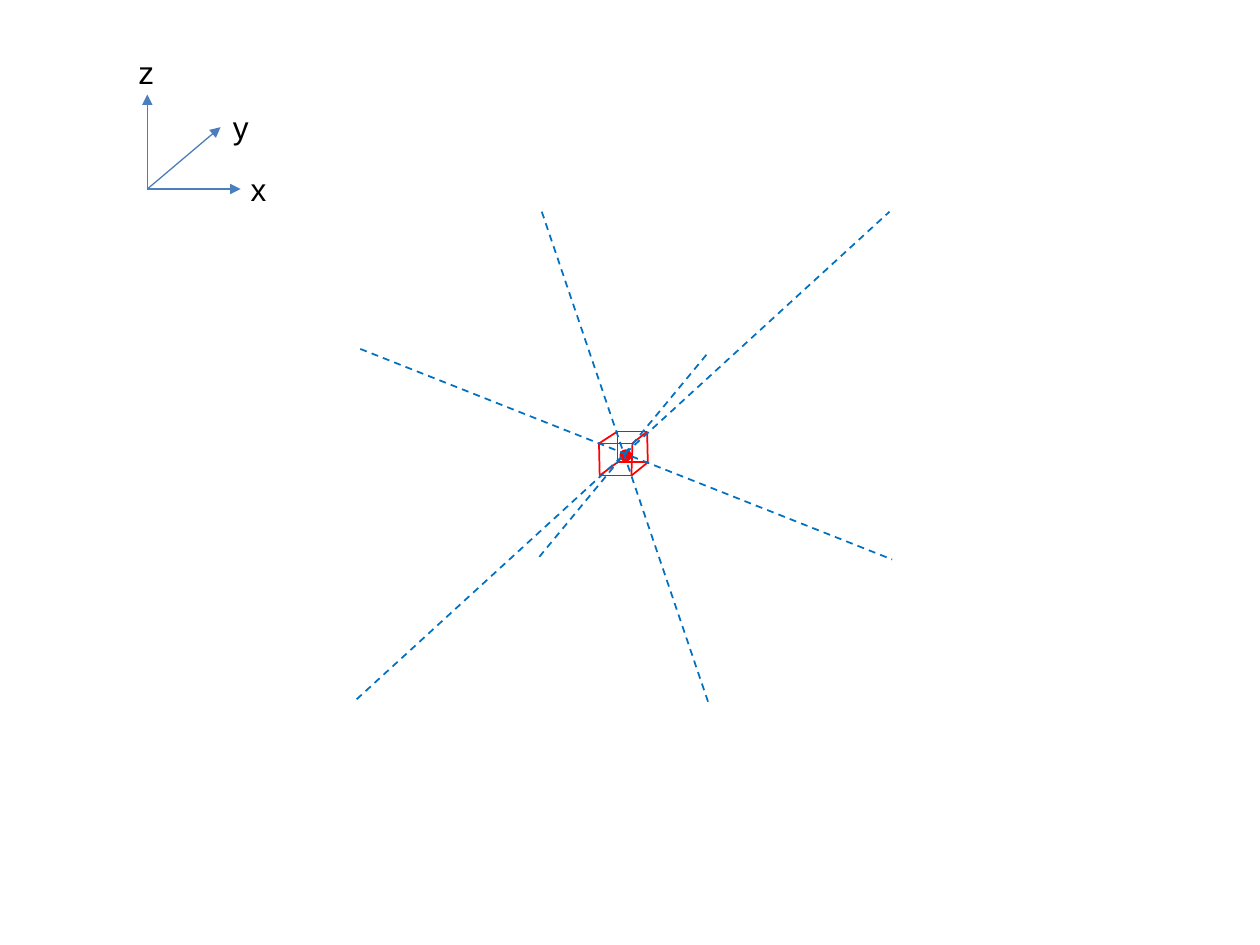
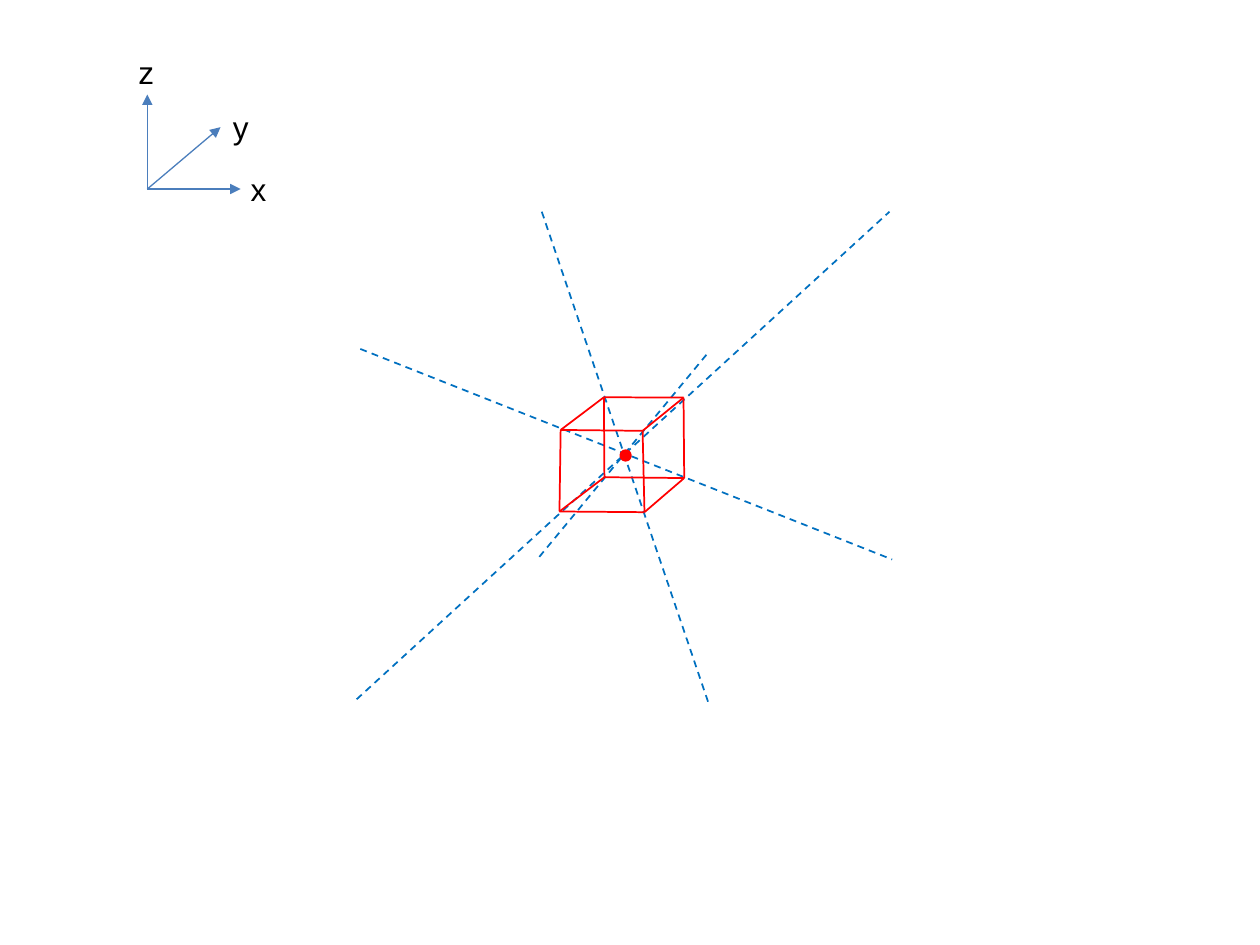
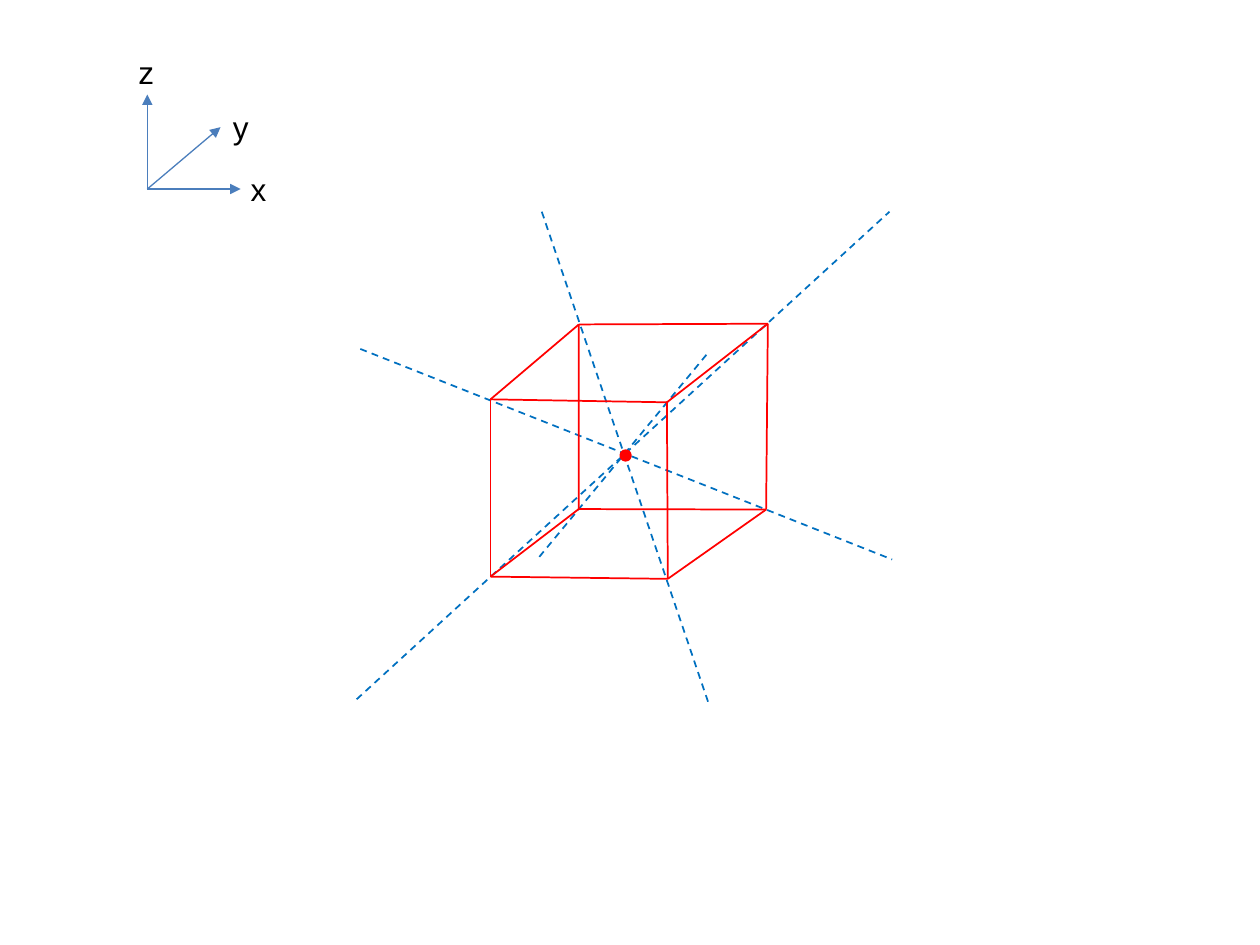
from lxml.etree import SubElement
from pptx import Presentation
from pptx.dml.color import RGBColor
from pptx.enum.dml import MSO_LINE
from pptx.enum.shapes import MSO_CONNECTOR, MSO_SHAPE
from pptx.enum.text import MSO_AUTO_SIZE
from pptx.oxml.ns import qn
from pptx.util import Pt

# Shared style
RED, RAY_BLUE, AXIS_BLUE, BLACK = "FF0000", "0070C0", "4B7EBC", "000000"
FONT = "Arial"

# Shared positions, in points
AXES_ORIGIN = (84.2, 108)
CENTER = (357.5, 260.3)
DOT_SIZE = 5
LABEL_SIZE = (18, 28.8)

# Axis name, arrow tip and label corner, relative to the origin
AXES = [
    ("x", (53.3, 0), (51.9, -14.4)),
    ("y", (41.8, -35.3), (41.8, -49.7)),
    ("z", (0, -54), (-12.2, -81.4)),
]

# Ends of the diagonals, relative to the center
RAYS = [
    ((-47.9, -139.3), (47.1, 140.7)),
    ((-153.7, 139.3), (150.8, -139.3)),
    ((-151.6, -60.9), (152.3, 59.4)),
    ((-49.3, 57.9), (47.1, -58.7)),
]

# Cube corners relative to the center: each face clockwise from its top left
SMALL_CUBE = {
    "front": [(-15.2, -6.9), (3.9, -6.9), (3.3, 11.5), (-14.8, 11.5)],
    "back": [(-4.7, -13.7), (12.3, -13.7), (12.7, 3.9), (-4.7, 3.9)],
}
MEDIUM_CUBE = {
    "front": [(-37.1, -14.6), (9.7, -14.1), (10.8, 32.4), (-37.8, 32)],
    "back": [(-12.4, -33.3), (33.1, -33.1), (33.5, 12.9), (-12.1, 12.4)],
}
LARGE_CUBE = {
    "front": [(-77.2, -32.1), (23.6, -30.4), (24.1, 70.5), (-77.2, 69.2)],
    "back": [(-26.7, -74.9), (81.3, -75.3), (80.3, 30.9), (-26.8, 30.6)],
}


def color(hex_string):
    return RGBColor.from_string(hex_string)


def shift(base, offset):
    return base[0] + offset[0], base[1] + offset[1]


def add_line(slide, start, end, line_color, width=1, dashed=False, arrow=False):
    ends = [Pt(value) for value in (*start, *end)]
    connector = slide.shapes.add_connector(MSO_CONNECTOR.STRAIGHT, *ends)
    connector.line.color.rgb = color(line_color)
    connector.line.width = Pt(width)
    if dashed:
        connector.line.dash_style = MSO_LINE.DASH
    properties = connector._element.spPr
    if arrow:
        SubElement(properties.find(qn("a:ln")), qn("a:tailEnd"), type="triangle")
    SubElement(properties, qn("a:effectLst"))


def add_text(slide, text, position, size, font_size=18, font_color=BLACK):
    box = slide.shapes.add_textbox(*[Pt(value) for value in (*position, *size)])
    frame = box.text_frame
    frame.word_wrap = True
    frame.auto_size = MSO_AUTO_SIZE.SHAPE_TO_FIT_TEXT
    run = frame.paragraphs[0].add_run()
    run.text = text
    run.font.name = FONT
    run.font.size = Pt(font_size)
    run.font.color.rgb = color(font_color)


def add_axes(slide, origin):
    for _, tip, _ in AXES:
        add_line(slide, origin, shift(origin, tip), AXIS_BLUE, width=0.75, arrow=True)
    for name, _, corner in AXES:
        add_text(slide, name, shift(origin, corner), LABEL_SIZE)


def add_rays(slide, center):
    for start, end in RAYS:
        add_line(slide, shift(center, start), shift(center, end), RAY_BLUE, dashed=True)


def add_dot(slide, center):
    left, top = shift(center, (-DOT_SIZE / 2, -DOT_SIZE / 2))
    dot = slide.shapes.add_shape(
        MSO_SHAPE.OVAL, Pt(left), Pt(top), Pt(DOT_SIZE), Pt(DOT_SIZE))
    dot.shadow.inherit = False
    dot.fill.solid()
    dot.fill.fore_color.rgb = color(RED)
    dot.line.color.rgb = color(RED)
    dot.line.width = Pt(2)


def add_cube(slide, center, cube):
    front = [shift(center, corner) for corner in cube["front"]]
    back = [shift(center, corner) for corner in cube["back"]]
    # Four edges around each face, and four from front to back
    for index in range(4):
        add_line(slide, front[index - 1], front[index], RED)
        add_line(slide, back[index - 1], back[index], RED)
        add_line(slide, front[index], back[index], RED)
    add_dot(slide, center)


def add_cube_slide(presentation, cube, rays_on_top=False):
    slide = presentation.slides.add_slide(presentation.slide_layouts[6])
    if not rays_on_top:
        add_rays(slide, CENTER)
    add_cube(slide, CENTER, cube)
    if rays_on_top:
        add_rays(slide, CENTER)
    add_axes(slide, AXES_ORIGIN)


def main():
    presentation = Presentation()
    presentation.slide_width = Pt(720)
    presentation.slide_height = Pt(540)
    add_cube_slide(presentation, SMALL_CUBE, rays_on_top=True)
    add_cube_slide(presentation, MEDIUM_CUBE)
    add_cube_slide(presentation, LARGE_CUBE)
    presentation.save("out.pptx")


if __name__ == "__main__":
    main()
